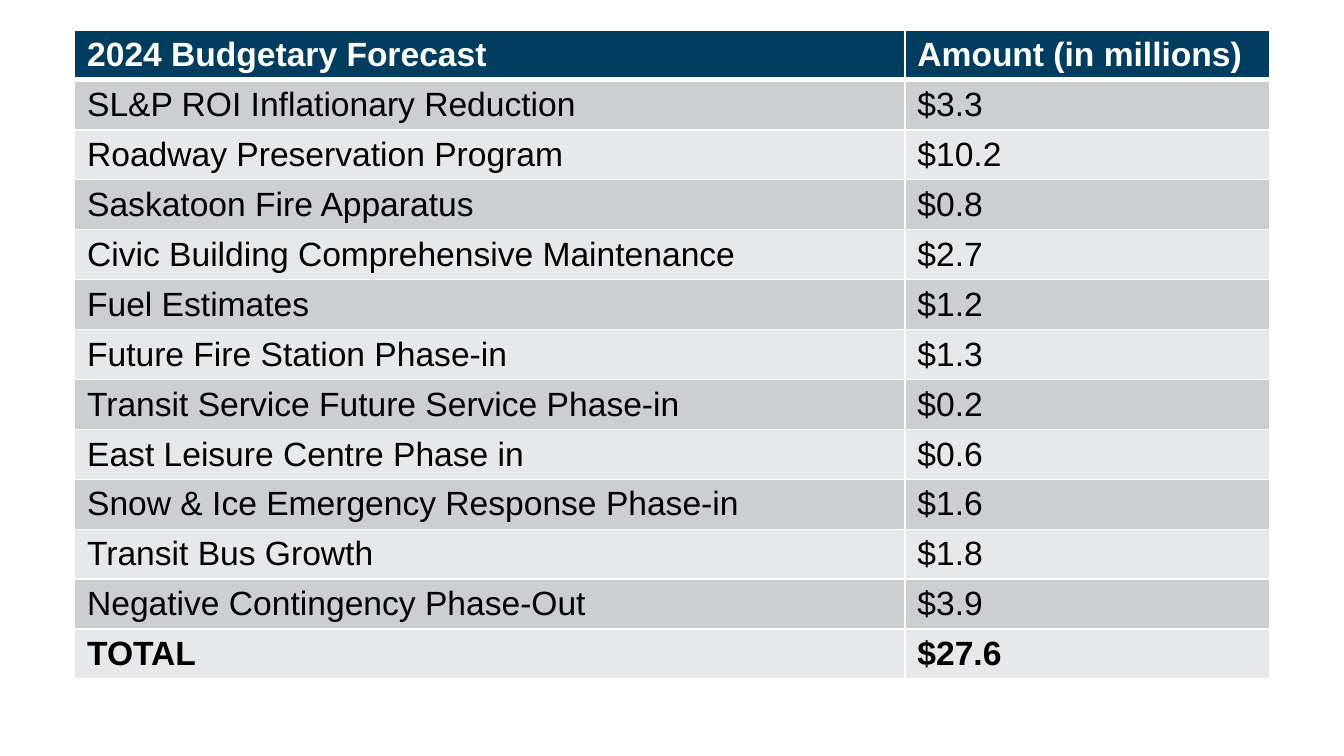
from lxml.etree import SubElement
from pptx import Presentation
from pptx.dml.color import RGBColor as RGB
from pptx.oxml.ns import qn
from pptx.util import Pt

WHITE = RGB(0xFF, 0xFF, 0xFF)
BLACK = RGB(0x00, 0x00, 0x00)
NAVY = RGB(0x00, 0x3D, 0x5F)
DARK_BAND = RGB(0xCC, 0xCE, 0xD2)
LIGHT_BAND = RGB(0xE7, 0xE8, 0xEA)

FORECAST = [
    ("2024 Budgetary Forecast", "Amount (in millions)"),
    ("SL&P ROI Inflationary Reduction", "$3.3"),
    ("Roadway Preservation Program", "$10.2"),
    ("Saskatoon Fire Apparatus", "$0.8"),
    ("Civic Building Comprehensive Maintenance", "$2.7"),
    ("Fuel Estimates", "$1.2"),
    ("Future Fire Station Phase-in", "$1.3"),
    ("Transit Service Future Service Phase-in", "$0.2"),
    ("East Leisure Centre Phase in", "$0.6"),
    ("Snow & Ice Emergency Response Phase-in", "$1.6"),
    ("Transit Bus Growth", "$1.8"),
    ("Negative Contingency Phase-Out", "$3.9"),
    ("TOTAL", "$27.6"),
]


class SlideBuilder:
    font = "Arial"
    size = Pt(18)
    margin_x = Pt(6.8)
    margin_y = Pt(3.3)

    def __init__(self, slide):
        self.s = slide

    def border(self, cell, side, width):
        ln = SubElement(cell._tc.get_or_add_tcPr(), qn(f"a:ln{side}"), w=str(Pt(width)))
        fill = SubElement(ln, qn("a:solidFill"))
        SubElement(fill, qn("a:srgbClr"), val=str(WHITE))

    def cell(self, cell, text, fill, color, bold, top, bottom):
        cell.margin_left = cell.margin_right = self.margin_x
        cell.margin_top = cell.margin_bottom = self.margin_y
        for side, width in (("L", 1), ("R", 1), ("T", top), ("B", bottom)):
            self.border(cell, side, width)
        cell.fill.solid()
        cell.fill.fore_color.rgb = fill
        cell.text = text
        font = cell.text_frame.paragraphs[0].runs[0].font
        font.name, font.size, font.bold = self.font, self.size, bold
        font.color.rgb = color

    def table(self, rows, left, top, widths, row_height):
        table = self.s.shapes.add_table(
            len(rows), len(widths), Pt(left), Pt(top),
            Pt(sum(widths)), Pt(row_height * len(rows)),
        ).table
        for column, width in zip(table.columns, widths):
            column.width = Pt(width)
        for i, row in enumerate(rows):
            table.rows[i].height = Pt(row_height)
            header = i == 0
            band = DARK_BAND if i % 2 else LIGHT_BAND
            for j, text in enumerate(row):
                self.cell(
                    table.cell(i, j), text,
                    fill=NAVY if header else band,
                    color=WHITE if header else BLACK,
                    bold=header or i == len(rows) - 1,
                    top=3 if i == 1 else 1,
                    bottom=3 if header else 1,
                )


def main():
    prs = Presentation()
    prs.slide_width, prs.slide_height = Pt(720), Pt(405)
    builder = SlideBuilder(prs.slides.add_slide(prs.slide_layouts[6]))
    builder.table(FORECAST, left=39.9, top=16, widths=(444.8, 195.6), row_height=25.9)
    prs.save("out.pptx")


if __name__ == "__main__":
    main()
